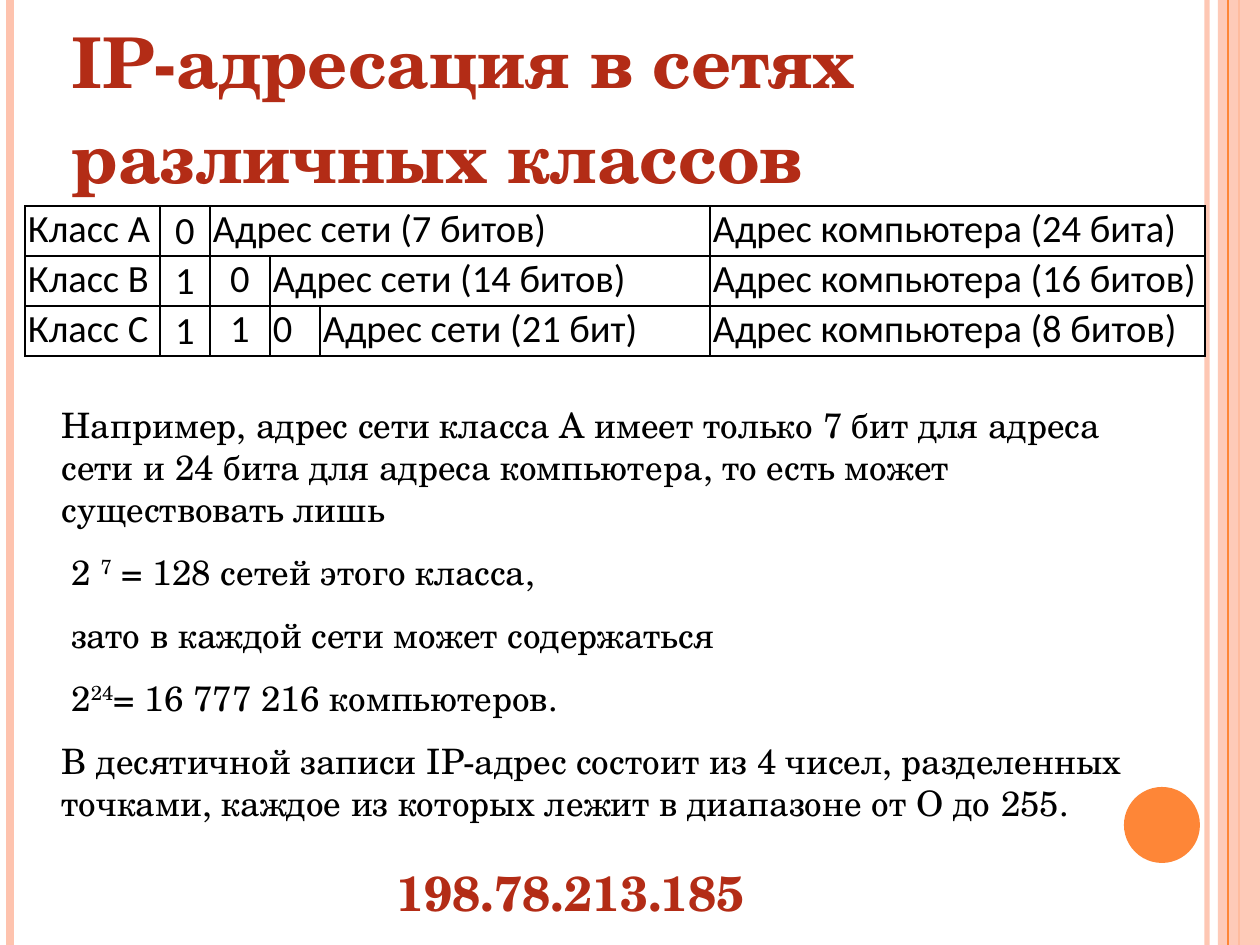
from lxml import etree
from pptx import Presentation
from pptx import util as u
from pptx.dml import color
from pptx.enum import shapes, text
from pptx.oxml import ns

SERIF = "TeX Gyre Schola"
SANS = "Calibri"
RED = "B32C16"
PEACH = "FEC3AE"
ORANGE = "FE8637"
BLACK = "000000"


def px(count):
    return u.Emu(round(count * 914400 / 126))


def paint(target, value):
    target.rgb = color.RGBColor.from_string(value)


def child(parent, tag, **attributes):
    return etree.SubElement(parent, ns.qn(tag), attributes)


def fade(properties, percent):
    tint = properties.find(".//" + ns.qn("a:srgbClr"))
    child(tint, "a:alpha", val=str(percent * 1000))


def place(shape, box):
    shape.left, shape.top, shape.width, shape.height = map(px, box)


def add_span(para, words, face, size, ink, bold=False, raised=False):
    span = para.add_run()
    span.text = words
    span.font.name = face
    span.font.size = u.Pt(size)
    span.font.bold = bold
    paint(span.font.color, ink)
    if raised:
        span.font._element.set("baseline", "30000")


def next_para(frame, index):
    return frame.add_paragraph() if index else frame.paragraphs[0]


def prepare(frame, anchor=text.MSO_ANCHOR.TOP):
    frame.word_wrap = True
    frame.auto_size = text.MSO_AUTO_SIZE.NONE
    frame.vertical_anchor = anchor


def add_stripe(page, x, height, ink, weight, opacity=100):
    stripe = page.shapes.add_connector(
        shapes.MSO_CONNECTOR.STRAIGHT, px(x), 0, px(x), px(height))
    stripe.line.width = u.Pt(weight)
    paint(stripe.line.color, ink)
    properties = stripe.element.spPr
    child(properties, "a:effectLst")
    if opacity < 100:
        fade(properties, opacity)


def add_block(page, kind, box, ink, opacity=100):
    block = page.shapes.add_shape(kind, *map(px, box))
    block.shadow.inherit = False
    block.fill.solid()
    paint(block.fill.fore_color, ink)
    block.line.fill.background()
    if opacity < 100:
        fade(block.element.spPr, opacity)


def add_frame(page, box):
    left, top, width, height = box
    right = left + width
    add_stripe(page, right - 53, height, PEACH, 3, 93)
    add_stripe(page, left + 10, height, PEACH, 4.5)
    add_stripe(page, right - 21, height, ORANGE, 1.5)
    add_block(page, shapes.MSO_SHAPE.RECTANGLE, (right - 42, top, 42, height), PEACH, 87)
    add_stripe(page, right - 32, height, ORANGE, 0.75)
    add_block(page, shapes.MSO_SHAPE.OVAL, (right - 136, height - 158, 76, 76), ORANGE)


def fill_title(page, box):
    title = page.shapes.title
    place(title, box)
    page.shapes.element.append(title.element)
    prepare(title.text_frame)
    for index, words in enumerate(["IP-адресация в сетях", "различных классов"]):
        para = next_para(title.text_frame, index)
        para.alignment = text.PP_ALIGN.LEFT
        para.line_spacing = 1.14
        add_span(para, words, SERIF, 40, RED, bold=True)


def fill_body(page, box):
    body = page.placeholders[1]
    place(body, box)
    page.shapes.element.append(body.element)
    frame = body.text_frame
    prepare(frame)
    frame.margin_top = px(10)
    lines = [
        ["Например, адрес сети класса А имеет только 7 бит для адреса сети и 24 бита "
         "для адреса компьютера, то есть может существовать лишь"],
        [" 2 ", "7", " = 128 сетей этого класса,"],
        [" зато в каждой сети может содержаться"],
        [" 2", "24", "= 16 777 216 компьютеров."],
        ["В десятичной записи IP-адрес состоит из 4 чисел, разделенных точками, "
         "каждое из которых лежит в диапазоне от О до 255."],
    ]
    for index, pieces in enumerate(lines):
        para = next_para(frame, index)
        properties = para._p.get_or_add_pPr()
        properties.set("marL", "0")
        properties.set("indent", "0")
        child(properties, "a:buNone")
        para.space_before = u.Pt(6 if index else 0)
        para.space_after = u.Pt(6)
        for position, words in enumerate(pieces):
            add_span(para, words, SERIF, 20, BLACK, raised=position == 1)


def add_address(page, box):
    label = page.shapes.add_textbox(*map(px, box))
    prepare(label.text_frame)
    add_span(label.text_frame.paragraphs[0], "198.78.213.185", SERIF, 28, RED, bold=True)


def add_borders(cell):
    properties = cell._tc.get_or_add_tcPr()
    for side in ("a:lnL", "a:lnR", "a:lnT", "a:lnB"):
        edge = child(properties, side, w=str(u.Pt(1)))
        child(child(edge, "a:solidFill"), "a:srgbClr", val=BLACK)


def add_classes(page, box):
    widths = [135, 50, 60, 50, 390, 495]
    rows = [
        ["Класс А", "0", "Адрес сети (7 битов)", None, None, "Адрес компьютера (24 бита)"],
        ["Класс В", "1", "0", "Адрес сети (14 битов)", None, "Адрес компьютера (16 битов)"],
        ["Класс С", "1", "1", "0", "Адрес сети (21 бит)", "Адрес компьютера (8 битов)"],
    ]
    table = page.shapes.add_table(len(rows), len(widths), *map(px, box)).table
    table.first_row = table.horz_banding = False
    for column, width in zip(table.columns, widths):
        column.width = px(width)
    for r, row in enumerate(rows):
        table.rows[r].height = px(box[3] // len(rows))
        for c, words in enumerate(row):
            cell = table.cell(r, c)
            cell.margin_left = cell.margin_right = px(3)
            cell.margin_top = cell.margin_bottom = 0
            add_borders(cell)
            cell.fill.background()
            if words is None:
                continue
            cell.vertical_anchor = text.MSO_ANCHOR.MIDDLE if c == 1 else text.MSO_ANCHOR.TOP
            para = cell.text_frame.paragraphs[0]
            centred = c in (1, 2) and len(words) == 1
            para.alignment = text.PP_ALIGN.CENTER if centred else text.PP_ALIGN.JUSTIFY
            add_span(para, words, SANS, 22, BLACK)
        if None in row:
            table.cell(r, row.index(None) - 1).merge(table.cell(r, 4))


def main():
    deck = Presentation()
    deck.slide_width, deck.slide_height = px(1260), px(945)
    page = deck.slides.add_slide(deck.slide_layouts[1])
    add_frame(page, (0, 0, 1260, 945))
    fill_title(page, (59, 0, 1033, 198))
    fill_body(page, (49, 393, 1131, 437))
    add_address(page, (384, 856, 483, 72))
    add_classes(page, (25, 206, 1180, 150))
    deck.save("out.pptx")


if __name__ == "__main__":
    main()
